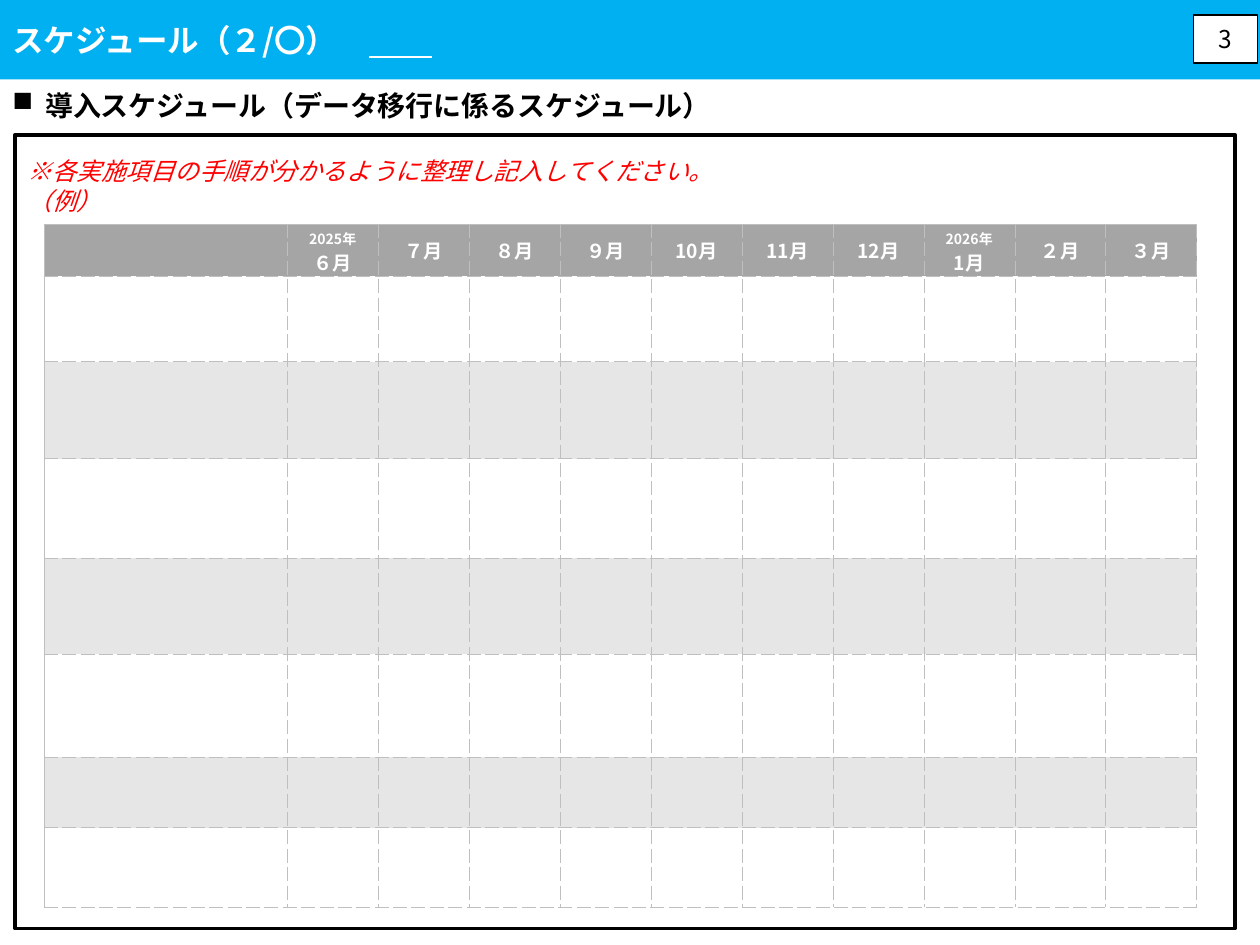
import dataclasses

import lxml.etree
import pptx
import pptx.dml.color
import pptx.enum.shapes
import pptx.enum.text
import pptx.oxml
import pptx.oxml.ns
import pptx.util

qn = pptx.oxml.ns.qn
ALIGN = pptx.enum.text.PP_ALIGN
ANCHOR = pptx.enum.text.MSO_ANCHOR
UNIT = pptx.util.Inches(0.1)

MONTHS = ["2025年\n６月", "７月", "８月", "９月", "10月", "11月", "12月",
          "2026年\n1月", "２月", "３月"]
ROW_HEIGHTS = [4.1, 6.8, 7.7, 7.9, 7.6, 8.2, 5.6, 6.3]
ITEM_WIDTH = 19.3


@dataclasses.dataclass(frozen=True)
class Theme:
    """Colours, font and type sizes of the slide."""
    font: str = "Noto Sans CJK JP"
    banner: str = "00B0F0"
    ink: str = "000000"
    paper: str = "FFFFFF"
    note: str = "FF0000"
    header: str = "A5A5A5"
    band: str = "E7E6E6"
    rule: str = "BFBFBF"
    title_size: float = 18
    heading_size: float = 16
    body_size: float = 14
    month_size: float = 11
    year_size: float = 8


@dataclasses.dataclass(frozen=True)
class Box:
    """A rectangle on the grid of 100 columns by 75 rows."""
    left: float
    top: float
    width: float
    height: float

    def inner(self, left, top, width, height):
        """Return a box placed relative to this one."""
        return Box(self.left + left, self.top + top, width, height)

    def lengths(self):
        """Return the position and size as slide lengths."""
        return [round(value * UNIT) for value in dataclasses.astuple(self)]


THEME = Theme()


def rgb(value):
    """Turn a hex string into a colour."""
    return pptx.dml.color.RGBColor.from_string(value)


def style_paragraph(paragraph, size, color, bold=False, italic=False, align=ALIGN.LEFT):
    """Set the type of a whole paragraph, East Asian letters included."""
    paragraph.alignment = align
    font = paragraph.font
    font.size = pptx.util.Pt(size)
    font.bold, font.italic = bold, italic
    font.color.rgb = rgb(color)
    font.name = THEME.font
    properties = paragraph._p.pPr.find(qn("a:defRPr"))
    latin = properties.find(qn("a:latin"))
    east_asian = lxml.etree.Element(qn("a:ea"), typeface=THEME.font)
    latin.addnext(east_asian)


def add_panel(slide, box, fill=None, line=None, weight=0):
    """Add a rectangle with the given fill and outline."""
    panel = slide.shapes.add_shape(pptx.enum.shapes.MSO_SHAPE.RECTANGLE, *box.lengths())
    panel.shadow.inherit = False
    if fill:
        panel.fill.solid()
        panel.fill.fore_color.rgb = rgb(fill)
    else:
        panel.fill.background()
    if line:
        panel.line.color.rgb = rgb(line)
        panel.line.width = pptx.util.Pt(weight)
    else:
        panel.line.fill.background()
    panel.text_frame.vertical_anchor = ANCHOR.MIDDLE
    return panel


def add_text(slide, box):
    """Add a wrapping text box that grows with its text."""
    frame = slide.shapes.add_textbox(*box.lengths()).text_frame
    frame.word_wrap = True
    frame.auto_size = pptx.enum.text.MSO_AUTO_SIZE.SHAPE_TO_FIT_TEXT
    return frame


def add_banner(slide, box):
    """Draw the title banner."""
    title = add_panel(slide, box, THEME.banner).text_frame.paragraphs[0]
    title.add_run().text = "スケジュール（２/〇）　"
    blank = title.add_run()
    blank.text = "　　"
    blank.font.underline = True
    style_paragraph(title, THEME.title_size, THEME.paper, bold=True)


def add_page_number(slide, box):
    """Draw the framed page number."""
    number = add_panel(slide, box, THEME.paper, THEME.ink, 0.75).text_frame.paragraphs[0]
    number.text = "3"
    style_paragraph(number, THEME.body_size, THEME.ink, align=ALIGN.CENTER)


def add_heading(slide, box):
    """Write the bulleted section heading."""
    heading = add_text(slide, box).paragraphs[0]
    heading.text = "導入スケジュール（データ移行に係るスケジュール）"
    style_paragraph(heading, THEME.heading_size, THEME.ink, bold=True)
    properties = heading._p.pPr
    indent = pptx.util.Inches(0.26)
    properties.set("marL", str(indent))
    properties.set("indent", str(-indent))
    properties.insert(0, lxml.etree.Element(qn("a:buChar"), char="■"))


def add_note(slide, box):
    """Write the instruction above the schedule."""
    frame = add_text(slide, box)
    frame.text = "※各実施項目の手順が分かるように整理し記入してください。\n（例）"
    for paragraph in frame.paragraphs:
        style_paragraph(paragraph, THEME.body_size, THEME.note, italic=True)


def set_borders(cell, solid_sides):
    """Rule a cell with hairlines, dashed except on the solid sides."""
    properties = cell._tc.get_or_add_tcPr()
    for position, side in enumerate("LRTB"):
        dash = "solid" if side in solid_sides else "sysDash"
        properties.insert(position, pptx.oxml.parse_xml(
            f'<a:ln{side} {pptx.oxml.ns.nsdecls("a")} w="3175"><a:solidFill>'
            f'<a:srgbClr val="{THEME.rule}"/></a:solidFill>'
            f'<a:prstDash val="{dash}"/></a:ln{side}>'))


def fill_header_cell(cell, label):
    """Write a month, with its year above it when the year starts."""
    cell.vertical_anchor = ANCHOR.MIDDLE
    cell.text = label
    if "\n" in label or not label:
        cell.margin_top, cell.margin_bottom = pptx.util.Inches(0.03), 0
    for paragraph in cell.text_frame.paragraphs:
        small = not label or paragraph.text.endswith("年")
        size = THEME.year_size if small else THEME.month_size
        style_paragraph(paragraph, size, THEME.paper, bold=True, align=ALIGN.CENTER)


def add_schedule(slide, box):
    """Draw the schedule table with one column a month."""
    labels = ["", *MONTHS]
    table = slide.shapes.add_table(len(ROW_HEIGHTS), len(labels), *box.lengths()).table
    month_width = (box.width - ITEM_WIDTH) / len(MONTHS)
    for index, column in enumerate(table.columns):
        column.width = round((month_width if index else ITEM_WIDTH) * UNIT)
    for row_index, (row, height) in enumerate(zip(table.rows, ROW_HEIGHTS)):
        row.height = round(height * UNIT)
        band = THEME.paper if row_index % 2 else THEME.band
        for column_index, cell in enumerate(row.cells):
            cell.fill.solid()
            cell.fill.fore_color.rgb = rgb(band if row_index else THEME.header)
            set_borders(cell, ("" if column_index else "L") + ("" if row_index else "T"))
            if not row_index:
                fill_header_cell(cell, labels[column_index])


def build_schedule_slide(slide):
    """Place the regions of the schedule slide."""
    banner = Box(0, 0, 100, 6.3)
    frame = Box(1.2, 10.7, 96.8, 63)
    add_banner(slide, banner)
    add_panel(slide, frame, line=THEME.ink, weight=2.25)
    add_heading(slide, Box(0, 6.5, 81.5, 3.7))
    add_note(slide, frame.inner(0, 1.2, 95.3, 5.7))
    add_schedule(slide, frame.inner(2.3, 7.1, 91.5, sum(ROW_HEIGHTS)))
    add_page_number(slide, banner.inner(94.7, 1.2, 5.1, 3.8))


def main():
    """Build and save the presentation."""
    deck = pptx.Presentation()
    deck.slide_width, deck.slide_height = 100 * UNIT, 75 * UNIT
    build_schedule_slide(deck.slides.add_slide(deck.slide_layouts[6]))
    deck.save("out.pptx")


if __name__ == "__main__":
    main()
